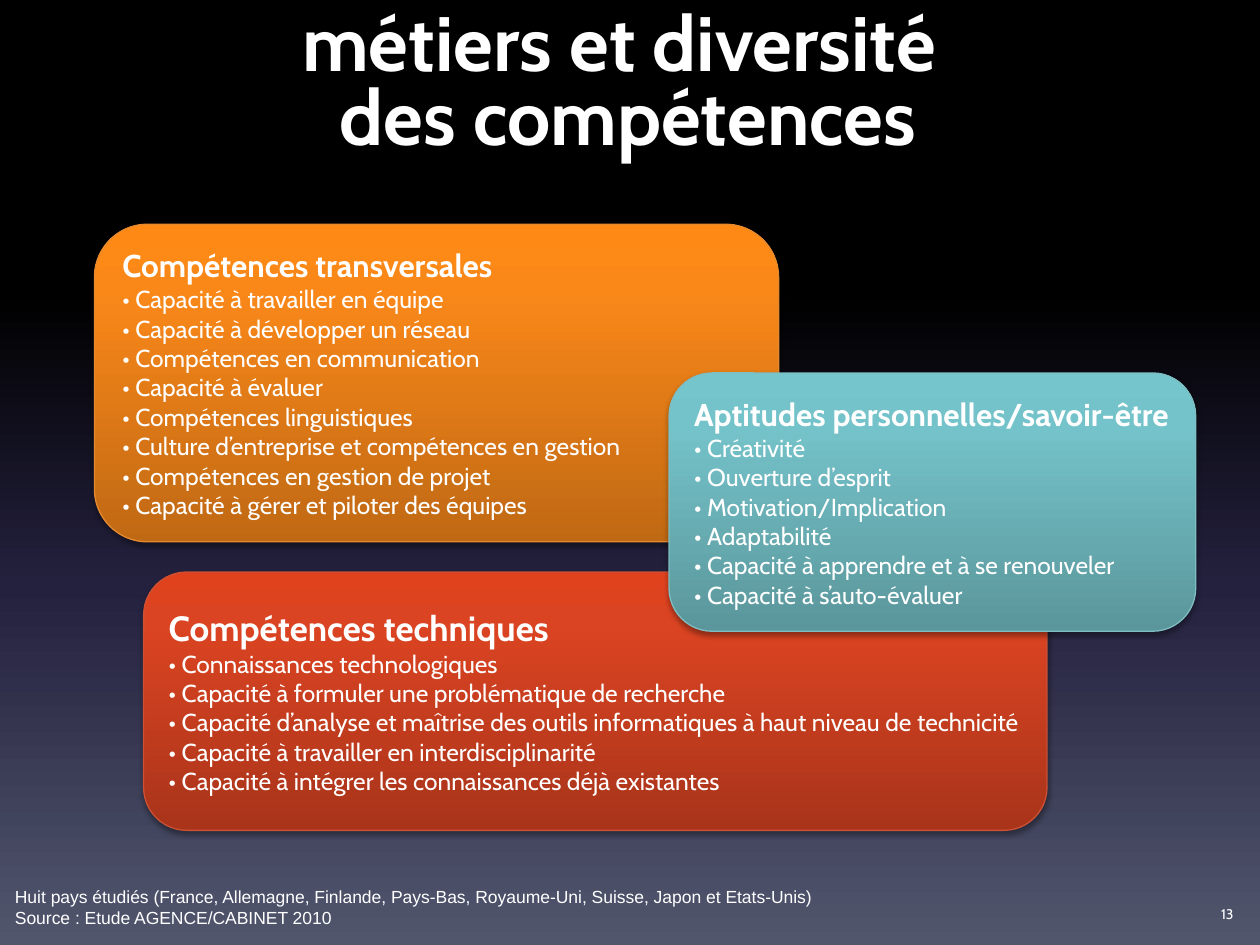
import lxml.etree
import pptx
import pptx.dml.color
import pptx.enum.shapes
import pptx.enum.text
import pptx.oxml.ns
import pptx.util

COLUMNS, ROWS = 100, 75
WIDTH, HEIGHT = pptx.util.Inches(10), pptx.util.Inches(7.5)
ALIGN = pptx.enum.text.PP_ALIGN
ANCHOR = pptx.enum.text.MSO_ANCHOR
UPWARD, DOWNWARD = 90, 270

COLORS = {
    "text": "FFFFFF",
    "shadow": "000000",
    "background": [(0, "000000"), (31, "000000"), (62, "24213E"), (100, "51566D")],
    "technical": [(0, "A9341A"), (80, "DB4422"), (100, "E0421E")],
    "technical line": "CB5034",
    "transversal": [(0, "C06914"), (80, "FA8819"), (100, "FF8915")],
    "transversal line": "E68A2F",
    "personal": [(0, "5A969B"), (80, "75C3CA"), (100, "74C6CC")],
    "personal line": "7EBEC3",
}

CARDS = [
    ("technical", (11.4, 45.4, 71.7, 20.5), 20, "Compétences techniques", [
        "Connaissances technologiques",
        "Capacité à formuler une problématique de recherche",
        "Capacité d’analyse et maîtrise des outils informatiques à haut niveau de technicité",
        "Capacité à travailler en interdisciplinarité",
        "Capacité à intégrer les connaissances déjà existantes",
    ]),
    ("transversal", (7.5, 17.8, 54.3, 25.2), 18, "Compétences transversales", [
        "Capacité à travailler en équipe",
        "Capacité à développer un réseau",
        "Compétences en communication",
        "Capacité à évaluer",
        "Compétences linguistiques",
        "Culture d’entreprise et compétences en gestion",
        "Compétences en gestion de projet",
        "Capacité à gérer et piloter des équipes",
    ]),
    ("personal", (53.1, 29.6, 41.8, 20.5), 18, "Aptitudes personnelles/savoir-être", [
        "Créativité",
        "Ouverture d’esprit",
        "Motivation/Implication",
        "Adaptabilité",
        "Capacité à apprendre et à se renouveler",
        "Capacité à s’auto-évaluer",
    ]),
]


def place(left, top, width, height):
    return (int(WIDTH * left / COLUMNS), int(HEIGHT * top / ROWS),
            int(WIDTH * width / COLUMNS), int(HEIGHT * height / ROWS))


def set_values(target, values):
    for name, value in values.items():
        setattr(target, name, value)


def add_child(parent, tag, **attributes):
    child = lxml.etree.SubElement(parent, pptx.oxml.ns.qn(tag))
    for name, value in attributes.items():
        child.set(name, str(value))
    return child


def set_gradient(fill, element, stops, angle):
    fill.gradient()
    fill.gradient_angle = angle
    stop_list = element.find(".//" + pptx.oxml.ns.qn("a:gsLst"))
    for stop in list(stop_list):
        stop_list.remove(stop)
    for position, color in stops:
        stop = add_child(stop_list, "a:gs", pos=position * 1000)
        add_child(stop, "a:srgbClr", val=color)


def set_shadow(shape):
    shape.shadow.inherit = False
    effects = shape.element.spPr.find(pptx.oxml.ns.qn("a:effectLst"))
    shadow = add_child(effects, "a:outerShdw", blurRad=pptx.util.Pt(3.1),
                       dist=pptx.util.Pt(1.8), dir=90 * 60000, rotWithShape=0)
    color = add_child(shadow, "a:srgbClr", val=COLORS["shadow"])
    add_child(color, "a:alpha", val=35000)


def write(paragraph, text, size, bold=False, font="Cabin", **layout):
    paragraph.text = text
    set_values(paragraph, {"alignment": ALIGN.LEFT, **layout})
    for run in paragraph.runs:
        set_values(run.font, {"name": font, "size": pptx.util.Pt(size), "bold": bold})
        run.font.color.rgb = pptx.dml.color.RGBColor.from_string(COLORS["text"])


def add_title(slide, text, area):
    title = slide.shapes.title
    set_values(title, dict(zip(("left", "top", "width", "height"), place(*area))))
    set_values(title.text_frame, {"word_wrap": True, "vertical_anchor": ANCHOR.TOP})
    write(title.text_frame.paragraphs[0], text, 44, bold=True,
          alignment=ALIGN.CENTER, line_spacing=0.8)


def add_card(slide, name, area, heading_size, heading, items):
    shape = slide.shapes.add_shape(
        pptx.enum.shapes.MSO_SHAPE.ROUNDED_RECTANGLE, *place(*area))
    set_gradient(shape.fill, shape.element.spPr, COLORS[name], UPWARD)
    shape.line.color.rgb = pptx.dml.color.RGBColor.from_string(COLORS[name + " line"])
    shape.line.width = pptx.util.Pt(0.75)
    set_shadow(shape)
    frame = shape.text_frame
    set_values(frame, {"word_wrap": True, "vertical_anchor": ANCHOR.MIDDLE,
                       "margin_right": pptx.util.Inches(0.05)})
    write(frame.paragraphs[0], heading, heading_size, bold=True)
    for item in items:
        write(frame.add_paragraph(), f"• {item}", 14)


def add_note(slide, lines, area, size, anchor=ANCHOR.TOP, **style):
    frame = slide.shapes.add_textbox(*place(*area)).text_frame
    set_values(frame, {"word_wrap": True, "vertical_anchor": anchor})
    for index, line in enumerate(lines):
        paragraph = frame.add_paragraph() if index else frame.paragraphs[0]
        write(paragraph, line, size, **style)


def main():
    presentation = pptx.Presentation()
    set_values(presentation, {"slide_width": WIDTH, "slide_height": HEIGHT})
    slide = presentation.slides.add_slide(presentation.slide_layouts[5])
    set_gradient(slide.background.fill, slide.element, COLORS["background"], DOWNWARD)
    add_title(slide, "métiers et diversité \ndes compétences", (2.8, 0.5, 94.1, 12.5))
    for card in CARDS:
        add_card(slide, *card)
    add_note(slide, [
        "Huit pays étudiés (France, Allemagne, Finlande, Pays-Bas, Royaume-Uni, "
        "Suisse, Japon et Etats-Unis)",
        "Source : Etude AGENCE/CABINET 2010",
    ], (0.2, 69.8, 99.8, 4.4), 10, font="Arial")
    add_note(slide, ["13"], (75.6, 70.5, 23.3, 4), 8, ANCHOR.MIDDLE, alignment=ALIGN.RIGHT)
    presentation.save("out.pptx")


if __name__ == "__main__":
    main()
